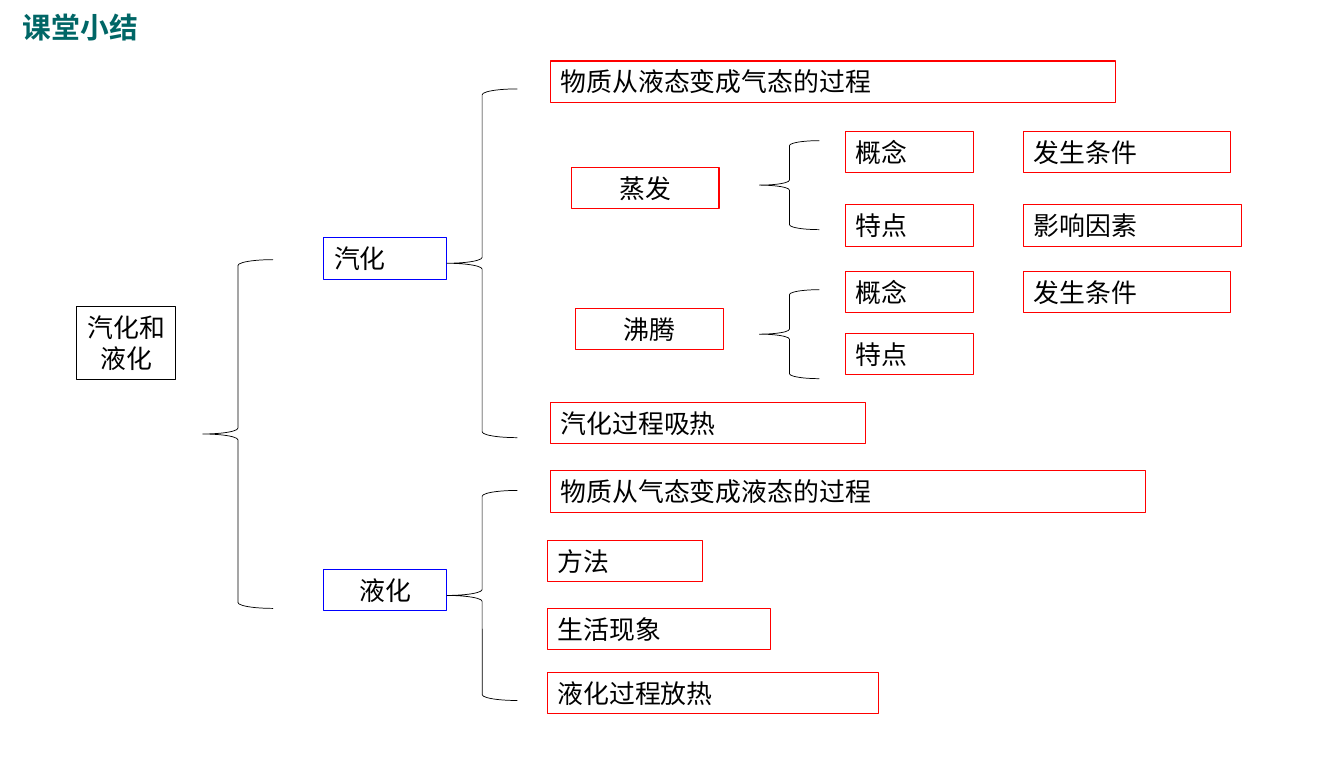
from pptx import Presentation
from pptx.dml.color import RGBColor
from pptx.enum.shapes import MSO_SHAPE as Shape
from pptx.enum.text import MSO_ANCHOR as Anchor, MSO_AUTO_SIZE as AutoSize, PP_ALIGN as Align
from pptx.oxml.ns import qn
from pptx.util import Inches, Pt

TEAL = RGBColor(0x00, 0x66, 0x66)
BLACK = RGBColor(0x00, 0x00, 0x00)
BLUE = RGBColor(0x00, 0x00, 0xFF)
RED = RGBColor(0xFF, 0x00, 0x00)

# Grid: one column or row is a tenth of an inch
CELL = 0.1
BOX_ROWS = 4
TOPIC_COL, DETAIL_COL, METHOD_COL, ASPECT_COL, FACTOR_COL = 31.3, 53.2, 52.9, 81.7, 98.9
TOPIC_BRACE_COL, ASPECT_BRACE_COL = 43.2, 73.4


class MindMap:
    """Holds the style and the current slide."""

    def __init__(self, deck):
        self.page = deck.slides.add_slide(deck.slide_layouts[5])
        self.body_font, self.title_font = "Arial", "Noto Sans CJK JP"

    def grid(self, *cells):
        return [Inches(round(cell * CELL, 2)) for cell in cells]

    def label(self, shape, text, align, font, size, color, bold=False):
        frame = shape.text_frame
        frame.text = text
        frame.word_wrap = True
        frame.auto_size = AutoSize.SHAPE_TO_FIT_TEXT
        frame.vertical_anchor = Anchor.TOP
        para = frame.paragraphs[0]
        para.alignment = align
        span = para.runs[0]
        span.font.name, span.font.size = font, Pt(size)
        span.font.bold, span.font.color.rgb = bold, color
        return span

    def title(self, text, col, row, cols, rows):
        title = self.page.shapes.title
        title.left, title.top, title.width, title.height = self.grid(col, row, cols, rows)
        span = self.label(title, text, Align.LEFT, self.title_font, 20, TEAL, bold=True)
        # East Asian glyphs take the same typeface
        east_asian = span.font._element.makeelement(qn("a:ea"), {"typeface": self.title_font})
        span.font._element.find(qn("a:latin")).addnext(east_asian)

    def outline(self, kind, color, weight, *cells):
        shape = self.page.shapes.add_shape(kind, *self.grid(*cells))
        shape.shadow.inherit = False
        shape.fill.background()
        shape.line.color.rgb, shape.line.width = color, Pt(weight)
        return shape

    def box(self, text, col, row, cols, rows=BOX_ROWS, color=RED, align=Align.LEFT):
        box = self.outline(Shape.RECTANGLE, color, 0.75, col, row, cols, rows)
        self.label(box, text, align, self.body_font, 18, BLACK)

    def brace(self, col, row, cols, rows):
        self.outline(Shape.LEFT_BRACE, BLACK, 0.5, col, row, cols, rows)


def main():
    deck = Presentation()
    deck.slide_width, deck.slide_height = Inches(12.99), Inches(7.48)
    chart = MindMap(deck)
    chart.title("课堂小结", 1.2, 0.4, 18.4, 4.4)

    # Root and its two topics
    chart.box("汽化和液化", 7.4, 29.6, 9.6, 7.1, BLACK, Align.CENTER)
    chart.box("汽化", TOPIC_COL, 23, 11.9, color=BLUE)
    chart.box("液化", TOPIC_COL, 55, 11.9, color=BLUE, align=Align.CENTER)

    # Details of each topic
    for text, col, row, cols in [
        ("物质从液态变成气态的过程", DETAIL_COL, 5.9, 54.6),
        ("汽化过程吸热", DETAIL_COL, 38.9, 30.5),
        ("物质从气态变成液态的过程", DETAIL_COL, 45.5, 57.5),
        ("方法", METHOD_COL, 52.2, 15),
        ("生活现象", METHOD_COL, 58.8, 21.6),
        ("液化过程放热", METHOD_COL, 65, 32),
    ]:
        chart.box(text, col, row, cols)

    # The two ways of vaporizing
    chart.box("蒸发", 55.2, 16.2, 14.3, align=Align.CENTER)
    chart.box("沸腾", 55.6, 29.8, 14.3, align=Align.CENTER)

    # Aspects of each way, with their factors
    for text, row in [("概念", 12.7), ("特点", 19.8), ("概念", 26.2), ("特点", 32.2)]:
        chart.box(text, ASPECT_COL, row, 12.4)
    for text, row, cols in [("发生条件", 12.7, 20), ("影响因素", 19.8, 21.1), ("发生条件", 26.2, 20)]:
        chart.box(text, FACTOR_COL, row, cols)

    # Braces
    for col, row, cols, rows in [
        (19.6, 25.1, 6.8, 33.7),
        (TOPIC_BRACE_COL, 8.6, 6.8, 33.7),
        (TOPIC_BRACE_COL, 47.4, 6.8, 20.3),
        (ASPECT_BRACE_COL, 13.6, 5.8, 8.6),
        (ASPECT_BRACE_COL, 28, 5.8, 8.6),
    ]:
        chart.brace(col, row, cols, rows)

    deck.save("out.pptx")


if __name__ == "__main__":
    main()
